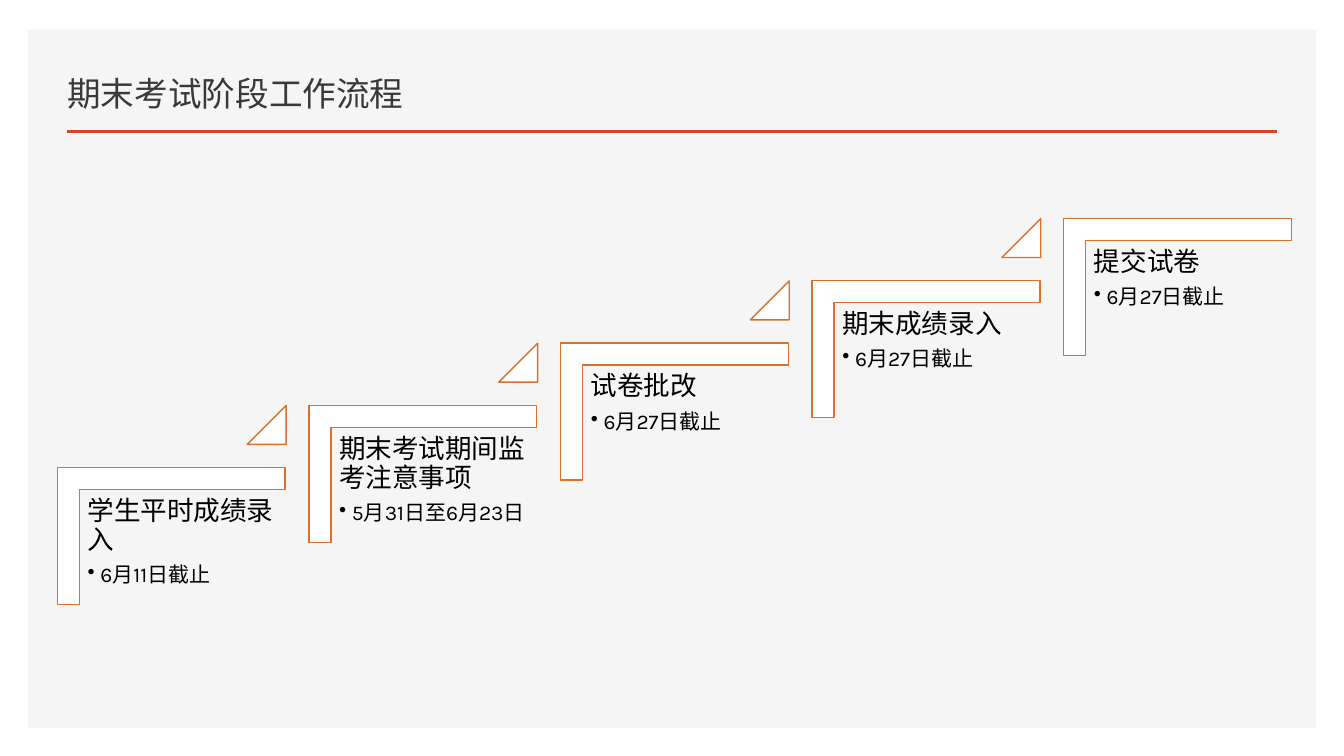
import dataclasses

import pptx
import pptx.dml.color
import pptx.enum.shapes
import pptx.enum.text
import pptx.oxml.ns
import pptx.util
from lxml import etree

Cm = pptx.util.Cm
Pt = pptx.util.Pt
Shape = pptx.enum.shapes.MSO_SHAPE
Anchor = pptx.enum.text.MSO_ANCHOR


@dataclasses.dataclass(frozen=True)
class Theme:
    font: str = "Karla"
    panel: str = "F5F5F5"
    white: str = "FFFFFF"
    rule: str = "D24726"
    step: str = "D7712C"
    title: str = "3B3838"
    text: str = "000000"
    title_size: float = 24
    step_size: float = 19
    date_size: float = 15


THEME = Theme()
STEP_RIGHT = 6.34
STEP_UP = 1.57
STEPS = [
    ("学生平时成绩录入", "6月11日截止"),
    ("期末考试期间监考注意事项", "5月31日至6月23日"),
    ("试卷批改", "6月27日截止"),
    ("期末成绩录入", "6月27日截止"),
    ("提交试卷", "6月27日截止"),
]


def rgb(color):
    return pptx.dml.color.RGBColor.from_string(color)


def add_figure(page, kind, left, top, width, height, fill, line=None, adjustments=()):
    figure = page.shapes.add_shape(kind, Cm(left), Cm(top), Cm(width), Cm(height))
    figure.shadow.inherit = False
    figure.fill.solid()
    figure.fill.fore_color.rgb = rgb(fill)
    if line:
        figure.line.color.rgb = rgb(line)
        figure.line.width = Pt(1)
    else:
        figure.line.fill.background()
    for index, value in enumerate(adjustments):
        figure.adjustments[index] = value
    return figure


def add_corner(page, left, top, width, height):
    corner = add_figure(
        page, Shape.HALF_FRAME, left, top, width, height,
        THEME.white, THEME.step, (0.161, 0.161),
    )
    geometry = corner._element.spPr.find(pptx.oxml.ns.qn("a:prstGeom"))
    geometry.set("prst", "corner")
    corner.rotation = 90


def add_rule(page, left, right, top, color, width):
    rule = page.shapes.add_connector(
        pptx.enum.shapes.MSO_CONNECTOR.STRAIGHT, Cm(left), Cm(top), Cm(right), Cm(top)
    )
    rule.line.color.rgb = rgb(color)
    rule.line.width = Pt(width)
    properties = rule._element.spPr
    etree.SubElement(properties, pptx.oxml.ns.qn("a:effectLst"))


def add_box(page, left, top, width, height, anchor=Anchor.TOP, inset=None):
    box = page.shapes.add_textbox(Cm(left), Cm(top), Cm(width), Cm(height))
    frame = box.text_frame
    frame.word_wrap = True
    frame.vertical_anchor = anchor
    if inset is not None:
        frame.margin_left = frame.margin_right = Cm(inset)
        frame.margin_top = frame.margin_bottom = Cm(inset)
    return frame


def write(para, text, size, color, after=0, bullet_indent=None):
    para.line_spacing = 0.9
    para.space_after = Pt(after)
    span = para.add_run()
    span.text = text
    span.font.name = THEME.font
    span.font.size = Pt(size)
    span.font.color.rgb = rgb(color)
    if bullet_indent:
        para.level = 1
        properties = para._p.get_or_add_pPr()
        properties.set("marL", str(Cm(bullet_indent)))
        properties.set("indent", str(-Cm(bullet_indent)))
        bullet = etree.SubElement(properties, pptx.oxml.ns.qn("a:buChar"))
        bullet.set("char", "•")


def add_step(page, index, heading, date):
    right, up = index * STEP_RIGHT, index * STEP_UP
    add_corner(page, 2.59 + right, 10.64 - up, 3.45, 5.74)
    frame = add_box(page, 2.01 + right, 12.34 - up, 5.18, 4.55, inset=0.2)
    write(frame.paragraphs[0], heading, THEME.step_size, THEME.text, after=6.65)
    write(frame.add_paragraph(), date, THEME.date_size, THEME.text,
          after=2.25, bullet_indent=0.32)
    if index < len(STEPS) - 1:
        add_figure(
            page, Shape.ISOSCELES_TRIANGLE, 6.23 + right, 10.22 - up, 0.98, 0.98,
            THEME.white, THEME.step, (1,),
        )


def main():
    deck = pptx.Presentation()
    deck.slide_width, deck.slide_height = Cm(33.87), Cm(19.05)
    page = deck.slides.add_slide(deck.slide_layouts[6])
    add_figure(page, Shape.RECTANGLE, 0.71, 0.74, 32.46, 17.6, THEME.panel)
    add_rule(page, 1.68, 32.18, 3.32, THEME.rule, 2)
    title = add_box(page, 1.45, 1.22, 12.32, 1.78, anchor=Anchor.BOTTOM)
    write(title.paragraphs[0], "期末考试阶段工作流程", THEME.title_size, THEME.title)
    for index, (heading, date) in enumerate(STEPS):
        add_step(page, index, heading, date)
    deck.save("out.pptx")


if __name__ == "__main__":
    main()
